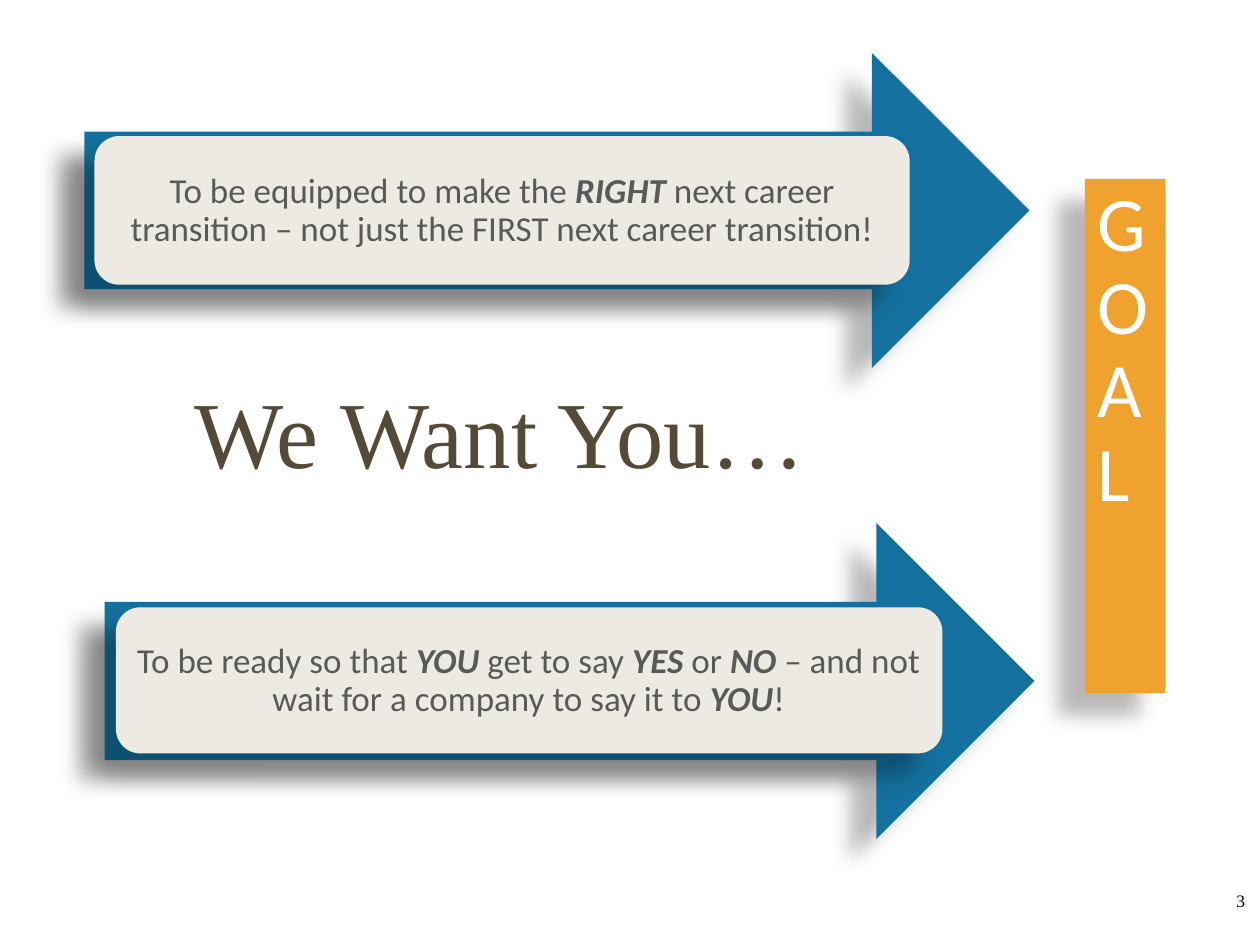
from lxml.etree import SubElement
from pptx import Presentation
from pptx.dml.color import RGBColor
from pptx.enum.shapes import MSO_SHAPE
from pptx.enum.text import MSO_ANCHOR, PP_ALIGN
from pptx.oxml.ns import qn
from pptx.util import Inches, Pt

BLUE = RGBColor(0x14, 0x70, 0x9E)
ORANGE = RGBColor(0xF0, 0xA2, 0x2E)
CREAM = RGBColor(0xEC, 0xEA, 0xE3)
GREY = RGBColor(0x59, 0x59, 0x59)
BROWN = RGBColor(0x53, 0x4B, 0x38)
WHITE = RGBColor(0xFF, 0xFF, 0xFF)
BLACK = RGBColor(0, 0, 0)
SANS = "Calibri"
SERIF = "Times New Roman"


class GoalSlide:
    def __init__(self, presentation):
        self.slide = presentation.slides.add_slide(presentation.slide_layouts[6])
        self.shapes = self.slide.shapes

    def cast_shadow(self, shape):
        """Soft shadow falling to the lower left."""
        shape.shadow.inherit = False
        effects = shape._element.spPr.find(qn("a:effectLst"))
        outer = SubElement(effects, qn("a:outerShdw"), blurRad=str(Pt(11.8)),
                           dist=str(Pt(19.7)), dir=str(141 * 60000),
                           algn="ctr", rotWithShape="0")
        color = SubElement(outer, qn("a:srgbClr"), val="000000")
        SubElement(color, qn("a:alpha"), val="28000")

    def block(self, shapes, preset, box, fill):
        shape = shapes.add_shape(preset, *map(Inches, box))
        shape.fill.solid()
        shape.fill.fore_color.rgb = fill
        shape.line.fill.background()
        self.cast_shadow(shape)
        return shape

    def run(self, paragraph, text, size, font, color, strong=None):
        run = paragraph.add_run()
        run.text = text
        run.font.size = Pt(size)
        run.font.name = font
        run.font.color.rgb = color
        run.font.bold = run.font.italic = strong
        return run

    def label(self, box, text, size, font, color, align,
              anchor=MSO_ANCHOR.TOP, wrap=True):
        frame = self.shapes.add_textbox(*map(Inches, box)).text_frame
        frame.word_wrap = wrap
        frame.vertical_anchor = anchor
        paragraph = frame.paragraphs[0]
        paragraph.alignment = align
        self.run(paragraph, text, size, font, color)

    def arrow(self, arrow_box, panel_box, text_box, phrases):
        """Arrow with a text panel; every second phrase is emphasised."""
        group = self.shapes.add_group_shape().shapes
        self.block(group, MSO_SHAPE.RIGHT_ARROW, arrow_box, BLUE)
        self.block(group, MSO_SHAPE.ROUNDED_RECTANGLE, panel_box, CREAM)
        frame = group.add_textbox(*map(Inches, text_box)).text_frame
        frame.word_wrap = True
        frame.vertical_anchor = MSO_ANCHOR.MIDDLE
        frame.margin_left = frame.margin_right = Inches(0.08)
        frame.margin_top = frame.margin_bottom = Inches(0.08)
        paragraph = frame.paragraphs[0]
        paragraph.alignment = PP_ALIGN.CENTER
        paragraph.line_spacing = 0.9
        for index, phrase in enumerate(phrases):
            self.run(paragraph, phrase, 20, SANS, GREY, strong=index % 2 == 1)

    def goal_bar(self, box, text):
        """Bar whose letters are stacked from top to bottom."""
        frame = self.block(self.shapes, MSO_SHAPE.RECTANGLE, box, ORANGE).text_frame
        frame.vertical_anchor = MSO_ANCHOR.MIDDLE
        frame._txBody.bodyPr.set("vert", "wordArtVert")
        paragraph = frame.paragraphs[0]
        paragraph.alignment = PP_ALIGN.LEFT
        paragraph.line_spacing = 0.9
        run = self.run(paragraph, text, 44, SANS, WHITE)
        run.font._element.set("spc", "-60")


def main():
    presentation = Presentation()
    presentation.slide_width = Inches(10)
    presentation.slide_height = Inches(7.5)
    page = GoalSlide(presentation)

    page.goal_bar((8.61, 1.42, 0.64, 4.08), "GOAL")
    page.arrow((0.67, 0.42, 7.5, 2.5), (0.75, 1.08, 6.47, 1.18),
               (0.81, 1.14, 6.35, 1.07),
               ["To be equipped to make the ", "RIGHT",
                " next career transition – not just the FIRST next career transition!"])
    page.label((8.72, 6.95, 1.26, 0.4), "3", 10, SERIF, BLACK,
               PP_ALIGN.RIGHT, MSO_ANCHOR.MIDDLE)
    page.arrow((0.83, 4.15, 7.38, 2.51), (0.92, 4.82, 6.56, 1.16),
               (0.97, 4.88, 6.45, 1.05),
               ["To be ready so that ", "YOU", " get to say ", "YES", " or ", "NO",
                " – and not wait for a company to say it to ", "YOU", "!"])
    page.label((1.42, 2.92, 5.1, 1.01), "We Want You…", 54, SERIF, BROWN,
               PP_ALIGN.CENTER, wrap=False)

    presentation.save("out.pptx")


if __name__ == "__main__":
    main()
